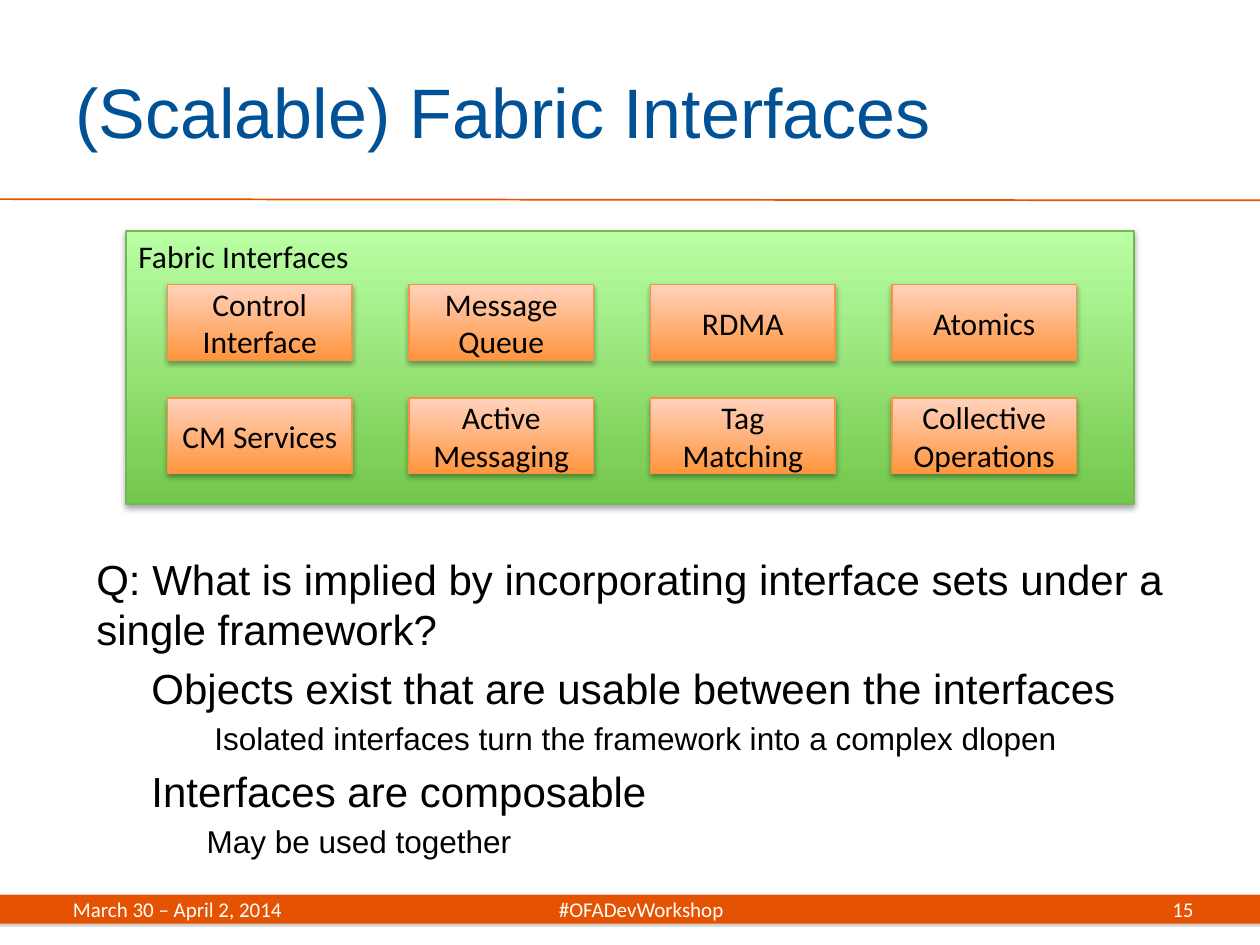
from lxml.etree import SubElement
from pptx import Presentation
from pptx.dml.color import RGBColor
from pptx.enum.shapes import MSO_CONNECTOR, MSO_SHAPE
from pptx.enum.text import MSO_ANCHOR, PP_ALIGN
from pptx.oxml.ns import qn
from pptx.util import Pt

BLACK = RGBColor(0x00, 0x00, 0x00)
WHITE = RGBColor(0xFF, 0xFF, 0xFF)
GREY = RGBColor(0x80, 0x80, 0x80)
TITLE_BLUE = RGBColor(0x00, 0x51, 0x95)
RULE_ORANGE = RGBColor(0xE5, 0x53, 0x02)
GREEN_DARK = RGBColor(0x73, 0xC7, 0x4B)
GREEN_LIGHT = RGBColor(0xBA, 0xFF, 0xA4)
GREEN_LINE = RGBColor(0x75, 0xB7, 0x55)
ORANGE_DARK = RGBColor(0xFF, 0x95, 0x3E)
ORANGE_LIGHT = RGBColor(0xFF, 0xD2, 0xBD)
ORANGE_LINE = RGBColor(0xF6, 0x92, 0x40)

INTERFACES = [
    ["Control\nInterface", "Message Queue", "RDMA", "Atomics"],
    ["CM Services", "Active Messaging", "Tag Matching", "Collective Operations"],
]
QUESTION = [
    ("Q: What is implied by incorporating interface sets under a single framework?", 0, 0, 24),
    ("Objects exist that are usable between the interfaces", 1, 31.5, 24),
    ("Isolated interfaces turn the framework into a complex dlopen", 2, 67.5, 18),
    ("Interfaces are composable", 1, 31.5, 24),
    ("May be used together", 2, 63, 18),
]


def write(para, text, size=18, font="Calibri", color=BLACK, align=PP_ALIGN.LEFT):
    """Put formatted text into a paragraph."""
    para.alignment = align
    span = para.add_run()
    span.text = text
    span.font.size = Pt(size)
    span.font.name = font
    span.font.color.rgb = color


def fill_lines(frame, text, anchor=MSO_ANCHOR.MIDDLE, **style):
    """Write each line of text as a paragraph of a wrapped frame."""
    frame.word_wrap = True
    frame.vertical_anchor = anchor
    for index, line in enumerate(text.split("\n")):
        write(frame.add_paragraph() if index else frame.paragraphs[0], line, **style)


def add_text_box(page, left, top, width, height):
    """Add an empty wrapped text box and return its frame."""
    frame = page.shapes.add_textbox(Pt(left), Pt(top), Pt(width), Pt(height)).text_frame
    frame.word_wrap = True
    return frame


def cast_shadow(box, color, blur):
    """Give a shape a soft shadow just below it."""
    box.shadow.inherit = False
    effects = box._element.spPr.find(qn("a:effectLst"))
    shadow = SubElement(effects, qn("a:outerShdw"), blurRad=str(int(Pt(blur))),
                        dist=str(int(Pt(1.8))), dir="5400000", rotWithShape="0")
    tint = SubElement(shadow, qn("a:srgbClr"), val=str(color))
    SubElement(tint, qn("a:alpha"), val="35000")


def add_panel(page, left, top, width, height, bottom_color, top_color, line_color):
    """Add a shaded rectangle with a vertical gradient."""
    box = page.shapes.add_shape(MSO_SHAPE.RECTANGLE, Pt(left), Pt(top), Pt(width), Pt(height))
    box.fill.gradient()
    box.fill.gradient_angle = 90
    for stop, color in zip(box.fill.gradient_stops, (bottom_color, top_color)):
        stop.color.rgb = color
    box.line.color.rgb = line_color
    box.line.width = Pt(0.75)
    cast_shadow(box, BLACK, 3.15)
    return box


def add_heading(page, left, top, width, height):
    """Place the title and the rule below it."""
    title = page.shapes.title
    title.left, title.top, title.width, title.height = map(Pt, (left, top, width, height))
    fill_lines(title.text_frame, "(Scalable) Fabric Interfaces",
               size=40, font="Arial", color=TITLE_BLUE)
    rule = page.shapes.add_connector(MSO_CONNECTOR.STRAIGHT, 0, Pt(113.8), Pt(720), Pt(114.5))
    rule.line.color.rgb = RULE_ORANGE
    rule.line.width = Pt(1)
    SubElement(rule._element.spPr, qn("a:effectLst"))


def add_interfaces(page, left, top, width, height):
    """Draw the framework panel with its grid of interface sets."""
    panel = add_panel(page, left, top, width, height, GREEN_DARK, GREEN_LIGHT, GREEN_LINE)
    fill_lines(panel.text_frame, "Fabric Interfaces", anchor=MSO_ANCHOR.TOP)
    for row, names in enumerate(INTERFACES):
        for column, name in enumerate(names):
            box = add_panel(page, left + 23.75 + 138 * column, top + 30.75 + 64.75 * row,
                            105.4, 43, ORANGE_DARK, ORANGE_LIGHT, ORANGE_LINE)
            fill_lines(box.text_frame, name, align=PP_ALIGN.CENTER)


def add_question(page, left, top, width, height):
    """Write the question and its indented answers."""
    frame = add_text_box(page, left, top, width, height)
    for index, (text, level, indent, size) in enumerate(QUESTION):
        para = frame.add_paragraph() if index else frame.paragraphs[0]
        para.level = level
        properties = para._p.get_or_add_pPr()
        properties.set("marL", str(int(Pt(indent))))
        properties.set("indent", "0")
        para.space_before = Pt(size * 0.2 if index else 0)
        write(para, text, size=size, font="Arial")


def add_footer(page, left, top, width, height):
    """Draw the footer bar with date, hashtag and page number."""
    bar = page.shapes.add_shape(MSO_SHAPE.RECTANGLE, Pt(left), Pt(top), Pt(width), Pt(height))
    bar.fill.solid()
    bar.fill.fore_color.rgb = RULE_ORANGE
    bar.line.fill.background()
    cast_shadow(bar, GREY, 0)
    number = add_text_box(page, left + 603.4, top, 85.7, height)
    fill_lines(number, "15", size=12, color=WHITE, align=PP_ALIGN.RIGHT)
    event = add_text_box(page, left + 34.6, top, 651.6, height)
    tabs = SubElement(event.paragraphs[0]._p.get_or_add_pPr(), qn("a:tabLst"))
    SubElement(tabs, qn("a:tab"), pos=str(int(Pt(324.7))), algn="ctr")
    fill_lines(event, "March 30 – April 2, 2014\t#OFADevWorkshop", size=12, color=WHITE)


def main():
    """Build and save the deck."""
    deck = Presentation()
    deck.slide_width, deck.slide_height = Pt(720), Pt(540)
    page = deck.slides.add_slide(deck.slide_layouts[5])
    add_heading(page, 36, 18, 588, 90)
    add_question(page, 48, 312.5, 648, 198)
    add_interfaces(page, 72, 132, 576, 156)
    add_footer(page, 0, 511.2, 720, 16.6)
    deck.save("out.pptx")


if __name__ == "__main__":
    main()
